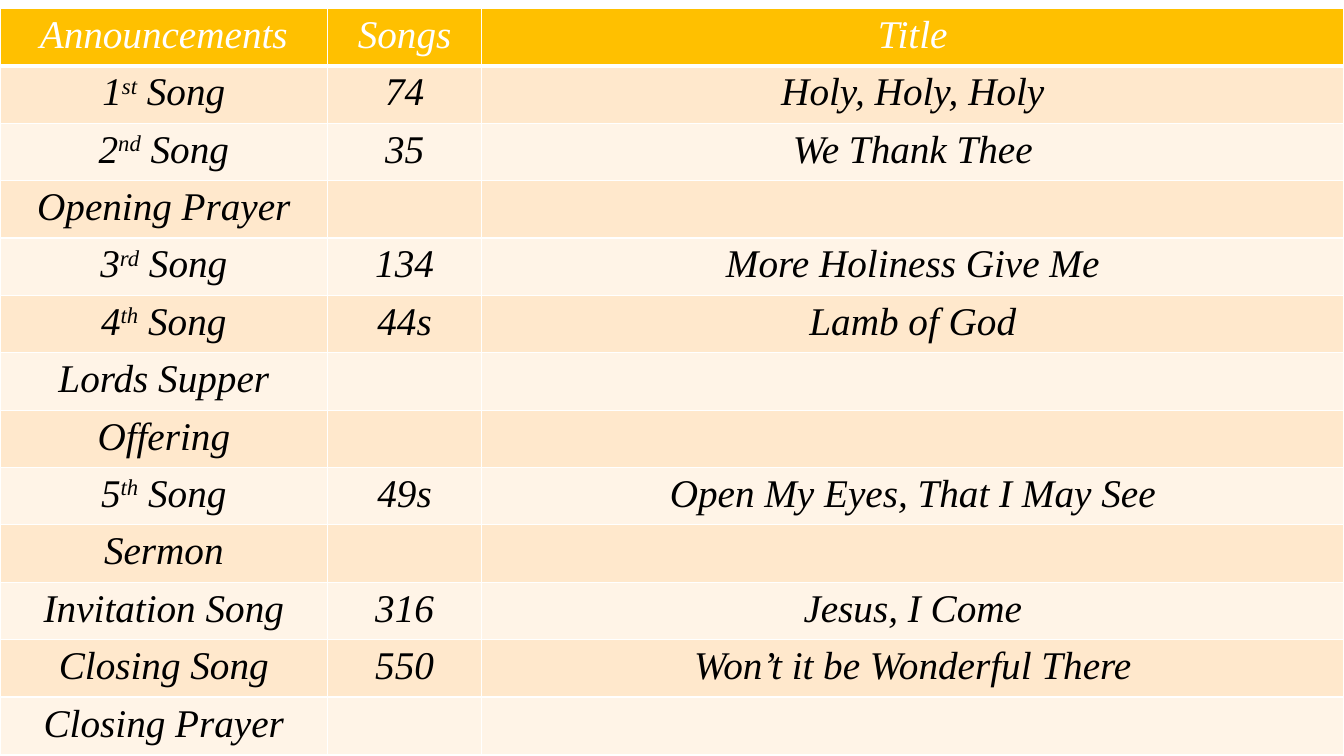
"""Build the order of service slide: a table of announcements, song numbers and titles."""
from lxml.etree import SubElement
from pptx import Presentation
from pptx.dml.color import RGBColor
from pptx.enum.text import PP_ALIGN
from pptx.oxml.ns import qn
from pptx.util import Pt


def rgb(value):
    return RGBColor.from_string(value)


def add_borders(cell, color, bottom):
    tcPr = cell._tc.get_or_add_tcPr()
    for tag, width in (("a:lnL", 1), ("a:lnR", 1), ("a:lnT", 1), ("a:lnB", bottom)):
        ln = SubElement(tcPr, qn(tag), w=str(Pt(width)))
        SubElement(SubElement(ln, qn("a:solidFill")), qn("a:srgbClr"), val=color)


SERVICE = [
    ("Announcements", "Songs", "Title"),
    ("1^st^ Song", "74", "Holy, Holy, Holy"),
    ("2^nd^ Song", "35", "We Thank Thee"),
    ("Opening Prayer", "", ""),
    ("3^rd^ Song", "134", "More Holiness Give Me"),
    ("4^th^ Song", "44s", "Lamb of God"),
    ("Lords Supper", "", ""),
    ("Offering", "", ""),
    ("5^th^ Song", "49s", "Open My Eyes, That I May See"),
    ("Sermon", "", ""),
    ("Invitation Song", "316", "Jesus, I Come"),
    ("Closing Song", "550", "Won’t it be Wonderful There"),
    ("Closing Prayer", "", ""),
]
COLUMN_WIDTHS = (234, 110, 616)
ROW_HEIGHT = 41

prs = Presentation()
prs.slide_width, prs.slide_height = Pt(960), Pt(540)
s = prs.slides.add_slide(prs.slide_layouts[6])

table = s.shapes.add_table(
    len(SERVICE), len(COLUMN_WIDTHS), Pt(0), Pt(6),
    Pt(sum(COLUMN_WIDTHS)), Pt(ROW_HEIGHT * len(SERVICE)),
).table
for column, width in zip(table.columns, COLUMN_WIDTHS):
    column.width = Pt(width)

for i, entries in enumerate(SERVICE):
    table.rows[i].height = Pt(ROW_HEIGHT)
    header = i == 0
    fill = "FFC000" if header else ("FFF4E7", "FFE8CC")[i % 2]
    for j, entry in enumerate(entries):
        cell = table.cell(i, j)
        add_borders(cell, "FFFFFF", 3 if header else 1)
        cell.fill.solid()
        cell.fill.fore_color.rgb = rgb(fill)
        p = cell.text_frame.paragraphs[0]
        p.alignment = PP_ALIGN.CENTER
        if not entry:
            continue
        for k, part in enumerate(entry.split("^")):
            r = p.add_run()
            r.text = part
            r.font.name = "Times New Roman"
            r.font.size = Pt(28)
            r.font.bold = False
            r.font.italic = True
            r.font.color.rgb = rgb("FFFFFF" if header else "000000")
            if k == 1:
                r._r.get_or_add_rPr().set("baseline", "30000")

prs.save("out.pptx")
